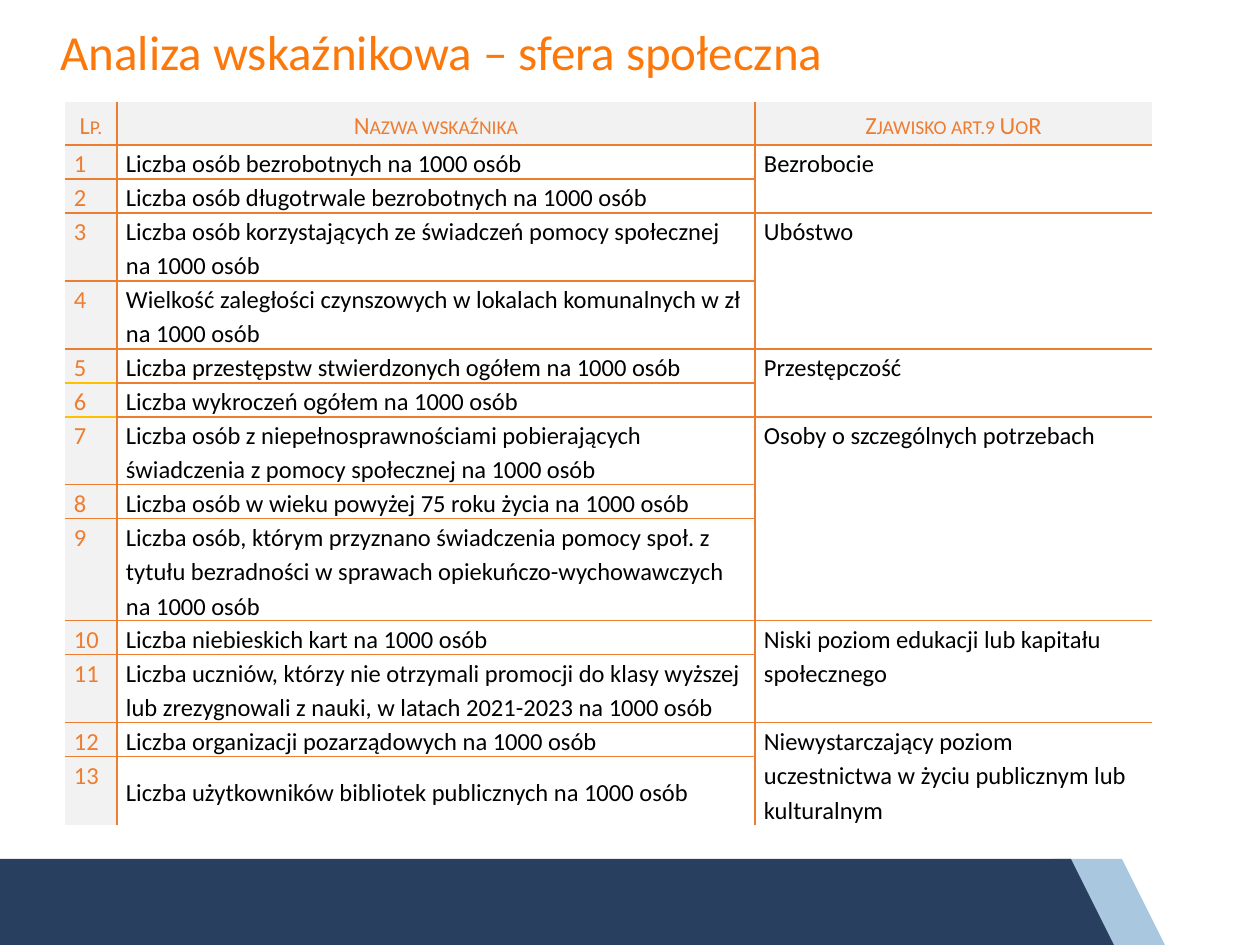
import dataclasses

import lxml.etree
import pptx
import pptx.dml.color
import pptx.enum.shapes
import pptx.enum.text
import pptx.oxml.ns
import pptx.util


@dataclasses.dataclass(frozen=True)
class Theme:
    font: str = "Calibri"
    title_size: int = 28
    table_size: int = 14
    title: str = "FC780B"
    accent: str = "ED7D31"
    gold: str = "FFC000"
    text: str = "000000"
    shade: str = "F2F2F2"
    navy: str = "293F60"
    sky: str = "A9C7DF"


THEME = Theme()
SLIDE_WIDTH, SLIDE_HEIGHT = 1260, 945
HEADER_HEIGHT, LINE_HEIGHT = 43, 34
COLUMN_WIDTHS = [52, 638, 397]
HEADINGS = ["Lp.", "Nazwa wskaźnika", "Zjawisko art.9 UoR"]
GROUPS = [
    ("Bezrobocie", [
        ("Liczba osób bezrobotnych na 1000 osób", 1),
        ("Liczba osób długotrwale bezrobotnych na 1000 osób", 1),
    ]),
    ("Ubóstwo", [
        ("Liczba osób korzystających ze świadczeń pomocy społecznej na 1000 osób", 2),
        ("Wielkość zaległości czynszowych w lokalach komunalnych w zł na 1000 osób", 2),
    ]),
    ("Przestępczość", [
        ("Liczba przestępstw stwierdzonych ogółem na 1000 osób", 1),
        ("Liczba wykroczeń ogółem na 1000 osób", 1),
    ]),
    ("Osoby o szczególnych potrzebach", [
        ("Liczba osób z niepełnosprawnościami pobierających świadczenia z pomocy "
         "społecznej na 1000 osób", 2),
        ("Liczba osób w wieku powyżej 75 roku życia na 1000 osób", 1),
        ("Liczba osób, którym przyznano świadczenia pomocy społ. z tytułu bezradności "
         "w sprawach opiekuńczo-wychowawczych na 1000 osób", 3),
    ]),
    ("Niski poziom edukacji lub kapitału społecznego", [
        ("Liczba niebieskich kart na 1000 osób", 1),
        ("Liczba uczniów, którzy nie otrzymali promocji do klasy wyższej lub "
         "zrezygnowali z nauki, w latach 2021-2023 na 1000 osób", 2),
    ]),
    ("Niewystarczający poziom uczestnictwa w życiu publicznym lub kulturalnym", [
        ("Liczba organizacji pozarządowych na 1000 osób", 1),
        ("Liczba użytkowników bibliotek publicznych na 1000 osób", 2),
    ]),
]


def px(length):
    return pptx.util.Emu(round(length * 914400 / 126))


def rgb(color):
    return pptx.dml.color.RGBColor.from_string(color)


def add_run(paragraph, text, size, color, spacing):
    paragraph.line_spacing = spacing
    run = paragraph.add_run()
    run.text = text
    run.font.name = THEME.font
    run.font.size = pptx.util.Pt(size)
    run.font.color.rgb = rgb(color)
    return run


def add_block(slide, kind, left, top, width, height, color):
    shape = slide.shapes.add_shape(kind, px(left), px(top), px(width), px(height))
    shape.shadow.inherit = False
    shape.fill.solid()
    shape.fill.fore_color.rgb = rgb(color)
    shape.line.fill.background()


def add_footer(slide, left, top, height):
    shapes = pptx.enum.shapes.MSO_SHAPE
    for start, end, color in [(1051, 1122, THEME.sky), (0, 1071, THEME.navy)]:
        add_block(slide, shapes.ISOSCELES_TRIANGLE, left + end - height // 2, top,
                  height, height, color)
        add_block(slide, shapes.RECTANGLE, left + start, top, end - start, height, color)


def add_title(slide, left, top, width, height):
    box = slide.shapes.add_textbox(px(left), px(top), px(width), px(height))
    frame = box.text_frame
    frame.word_wrap = True
    frame.vertical_anchor = pptx.enum.text.MSO_ANCHOR.MIDDLE
    add_run(frame.paragraphs[0], "Analiza wskaźnikowa – sfera społeczna",
            THEME.title_size, THEME.title, 0.9)


def set_borders(cell, **colors):
    properties = cell._tc.get_or_add_tcPr()
    for index, side in enumerate("LRTB"):
        line = lxml.etree.Element(pptx.oxml.ns.qn(f"a:ln{side}"), w=str(pptx.util.Pt(1)))
        color = colors.get(side)
        if color:
            fill = lxml.etree.SubElement(line, pptx.oxml.ns.qn("a:solidFill"))
            lxml.etree.SubElement(fill, pptx.oxml.ns.qn("a:srgbClr"), val=color)
        else:
            lxml.etree.SubElement(line, pptx.oxml.ns.qn("a:noFill"))
        properties.insert(index, line)


def format_cell(cell, shaded, middle):
    anchors = pptx.enum.text.MSO_ANCHOR
    cell.margin_left = cell.margin_right = px(9)
    cell.margin_top = cell.margin_bottom = 0
    cell.vertical_anchor = anchors.MIDDLE if middle else anchors.TOP
    if shaded:
        cell.fill.solid()
        cell.fill.fore_color.rgb = rgb(THEME.shade)
    else:
        cell.fill.background()


def write_cell(cell, text, color):
    return add_run(cell.text_frame.paragraphs[0], text, THEME.table_size, color, 1.15)


def add_indicator_table(slide, left, top):
    indicators = [indicator for _, group in GROUPS for indicator in group]
    heights = [HEADER_HEIGHT] + [lines * LINE_HEIGHT for _, lines in indicators]
    last_row, last_column = len(indicators), len(COLUMN_WIDTHS) - 1
    frame = slide.shapes.add_table(last_row + 1, last_column + 1, px(left), px(top),
                                   px(sum(COLUMN_WIDTHS)), px(sum(heights)))
    table = frame.table
    table.first_row = table.horz_banding = False
    for column, width in zip(table.columns, COLUMN_WIDTHS):
        column.width = px(width)
    for row, height in zip(table.rows, heights):
        row.height = px(height)

    for row in range(last_row + 1):
        for column in range(last_column + 1):
            cell = table.cell(row, column)
            format_cell(cell, row == 0 or column == 0,
                        row == 0 or (column == 1 and row > 3))
            above, below = (
                THEME.gold if column == 0 and edge in (5, 6) else THEME.accent
                for edge in (row - 1, row))
            set_borders(cell,
                        L=THEME.accent if column > 0 else None,
                        R=THEME.accent if column < last_column else None,
                        T=above if row > 0 else None,
                        B=below if row < last_row else None)

    for column, heading in enumerate(HEADINGS):
        cell = table.cell(0, column)
        run = write_cell(cell, heading, THEME.accent)
        run._r.get_or_add_rPr().set("cap", "small")
        cell.text_frame.paragraphs[0].alignment = pptx.enum.text.PP_ALIGN.CENTER

    row = 1
    for phenomenon, group in GROUPS:
        end = row + len(group) - 1
        merged = table.cell(row, last_column)
        merged.merge(table.cell(end, last_column))
        write_cell(merged, phenomenon, THEME.text)
        if end == last_row:
            bottom = merged._tc.tcPr.find(pptx.oxml.ns.qn("a:lnB"))
            bottom.clear()
            lxml.etree.SubElement(bottom, pptx.oxml.ns.qn("a:noFill"))
        for indicator, _ in group:
            write_cell(table.cell(row, 0), str(row), THEME.accent)
            write_cell(table.cell(row, 1), indicator, THEME.text)
            row += 1


def main():
    presentation = pptx.Presentation()
    presentation.slide_width = px(SLIDE_WIDTH)
    presentation.slide_height = px(SLIDE_HEIGHT)
    slide = presentation.slides.add_slide(presentation.slide_layouts[6])
    add_footer(slide, 0, 859, 86)
    add_title(slide, 48, -4, 1158, 118)
    add_indicator_table(slide, 65, 102)
    presentation.save("out.pptx")


if __name__ == "__main__":
    main()
